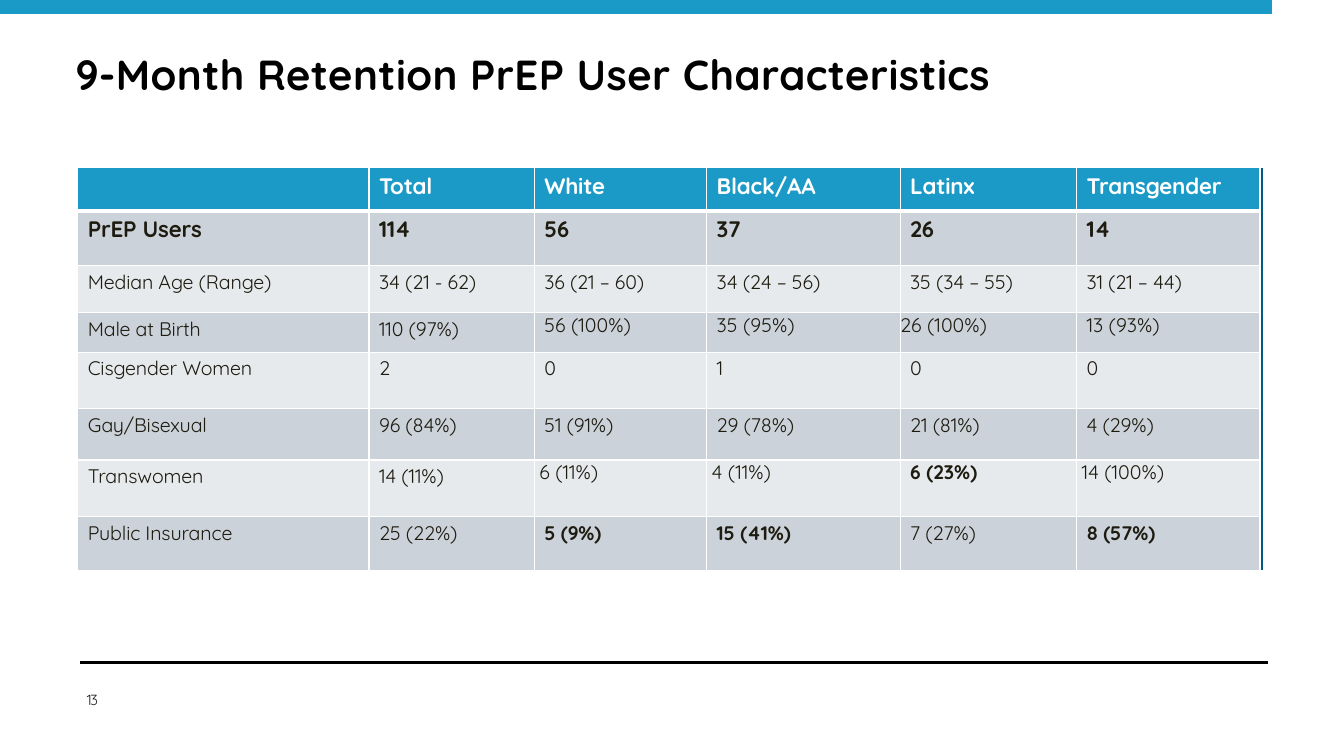
from lxml import etree
from pptx import Presentation
from pptx.dml.color import RGBColor
from pptx.enum.shapes import MSO_CONNECTOR, MSO_SHAPE
from pptx.enum.text import MSO_ANCHOR, PP_ALIGN
from pptx.oxml.ns import qn
from pptx.util import Pt

STRAIGHT = MSO_CONNECTOR.STRAIGHT
RECTANGLE = MSO_SHAPE.RECTANGLE
TOP, MIDDLE = MSO_ANCHOR.TOP, MSO_ANCHOR.MIDDLE
LEFT, CENTER = PP_ALIGN.LEFT, PP_ALIGN.CENTER

FONT = "Quicksand"
WHITE, BLACK, INK = "FFFFFF", "000000", "1E1C11"
HEADER_BLUE, EDGE_BLUE = "1B9AC7", "005C84"
DARK_BAND, LIGHT_BAND = "CCD2D9", "E7EAED"

COLUMN_WIDTHS = [208.1, 118.1, 123.1, 138.2, 126, 131, 2.2]
ROW_HEIGHTS = [31, 38.9, 33.8, 28.1, 40.3, 36.7, 40.3, 38.9]
ROWS = [
    ["", "Total", "White", "Black/AA", "Latinx", "Transgender"],
    ["PrEP Users", "114", "56", "37", "26", "14"],
    ["Median Age (Range)", "34 (21 - 62)", "36 (21 – 60)", "34 (24 – 56)",
     "35 (34 – 55)", "31 (21 – 44)"],
    ["Male at Birth", "110 (97%)", "56 (100%)", "35 (95%)", "26 (100%)", "13 (93%)"],
    ["Cisgender Women", "2", "0", "1", "0", "0"],
    ["Gay/Bisexual", "96 (84%)", "51 (91%)", "29 (78%)", "21 (81%)", "4 (29%)"],
    ["Transwomen", "14 (11%)", "6 (11%)", "4 (11%)", "6 (23%)", "14 (100%)"],
    ["Public Insurance", "25 (22%)", "5 (9%)", "15 (41%)", "7 (27%)", "8 (57%)"],
]
BOLD_VALUES = {"6 (23%)", "5 (9%)", "15 (41%)", "8 (57%)"}
CELL_INDENT = 7.2
RAISED_INDENTS = {
    (3, 2): 7.2, (3, 3): 7.2, (3, 4): 0, (3, 5): 7.2,
    (6, 2): 3.6, (6, 3): 3.6, (6, 4): 7.2, (6, 5): 3.6,
}


def rgb(color):
    """Turn a hex string into a colour."""
    return RGBColor.from_string(color)


def set_text(frame, text, size, color, bold=False, spacing=0, align=LEFT):
    """Write one styled paragraph into a text frame."""
    frame.text = text
    para = frame.paragraphs[0]
    para.alignment = align
    for span in para.runs:
        span.font.name = FONT
        span.font.size = Pt(size)
        span.font.bold = bold
        span.font.color.rgb = rgb(color)
        span.font._element.set("spc", str(round(spacing * 100)))


def add_text(page, left, top, width, height, text, size, color, inset_top=0,
             wrap=True, anchor=TOP, **style):
    """Add a text box without side insets."""
    frame = page.shapes.add_textbox(Pt(left), Pt(top), Pt(width), Pt(height)).text_frame
    frame.margin_left = frame.margin_right = frame.margin_bottom = 0
    frame.margin_top = Pt(inset_top)
    frame.word_wrap = wrap
    frame.vertical_anchor = anchor
    set_text(frame, text, size, color, **style)


def add_bar(page, left, top, width, height, color):
    """Add a plain filled rectangle."""
    bar = page.shapes.add_shape(RECTANGLE, Pt(left), Pt(top), Pt(width), Pt(height))
    bar.shadow.inherit = False
    bar.fill.solid()
    bar.fill.fore_color.rgb = rgb(color)
    bar.line.fill.background()


def add_rule(page, left, right, top, color, weight):
    """Add a horizontal line."""
    rule = page.shapes.add_connector(STRAIGHT, Pt(left), Pt(top), Pt(right), Pt(top))
    rule.line.color.rgb = rgb(color)
    rule.line.width = Pt(weight)
    etree.SubElement(rule._element.spPr, qn("a:effectLst"))


def paint_cell(cell, color, top_weight, bottom_weight):
    """Give a cell white borders and a solid fill."""
    properties = cell._tc.get_or_add_tcPr()
    weights = {"lnL": 1, "lnR": 1, "lnT": top_weight, "lnB": bottom_weight}
    for side, weight in weights.items():
        border = etree.SubElement(properties, qn("a:" + side), w=str(Pt(weight)))
        fill = etree.SubElement(border, qn("a:solidFill"))
        etree.SubElement(fill, qn("a:srgbClr"), val=WHITE)
    cell.fill.solid()
    cell.fill.fore_color.rgb = rgb(color)


def fill_cell(cell, row, column, text):
    """Write one table value with its insets."""
    raised = (row, column) in RAISED_INDENTS
    cell.margin_left = Pt(RAISED_INDENTS.get((row, column), CELL_INDENT))
    cell.margin_top = Pt(0 if raised else 3)
    cell.margin_right = cell.margin_bottom = 0
    set_text(cell.text_frame, text, 16 if row < 2 else 14,
             WHITE if row == 0 else INK,
             bold=row < 2 or text in BOLD_VALUES,
             spacing=0 if raised else -0.1)


def add_user_table(page, left, top):
    """Add the table of user characteristics with its narrow edge column."""
    table = page.shapes.add_table(
        len(ROW_HEIGHTS), len(COLUMN_WIDTHS), Pt(left), Pt(top),
        Pt(sum(COLUMN_WIDTHS)), Pt(sum(ROW_HEIGHTS))).table
    for column, width in zip(table.columns, COLUMN_WIDTHS):
        column.width = Pt(width)
    edge = len(COLUMN_WIDTHS) - 1
    for row, values in enumerate(ROWS):
        table.rows[row].height = Pt(ROW_HEIGHTS[row])
        band = HEADER_BLUE if row == 0 else DARK_BAND if row % 2 else LIGHT_BAND
        weights = (3 if row == 1 else 1, 3 if row == 0 else 1)
        for column, text in enumerate(values):
            cell = table.cell(row, column)
            paint_cell(cell, band, *weights)
            fill_cell(cell, row, column, text)
        edge_cell = table.cell(row, edge)
        edge_cell.margin_left = edge_cell.margin_right = 0
        paint_cell(edge_cell, EDGE_BLUE, 1, 1)
    table.cell(0, edge).merge(table.cell(len(ROWS) - 1, edge))


def main():
    """Build the slide and save it."""
    deck = Presentation()
    deck.slide_width, deck.slide_height = Pt(960), Pt(540)
    page = deck.slides.add_slide(deck.slide_layouts[6])
    add_bar(page, 0, 0, 908.6, 10, "1A9AC7")
    add_rule(page, 57, 905.8, 473, BLACK, 2)
    add_text(page, 57, 490.3, 18, 18.7, "13", 10.5, "1F1F1F", wrap=False,
             anchor=MIDDLE, align=CENTER, spacing=-1)
    add_text(page, 54, 27.4, 851.8, 58.3, "9-Month Retention PrEP User Characteristics",
             30, BLACK, inset_top=7.2, bold=True, spacing=0.3)
    add_user_table(page, 55.5, 119.8)
    deck.save("out.pptx")


if __name__ == "__main__":
    main()
